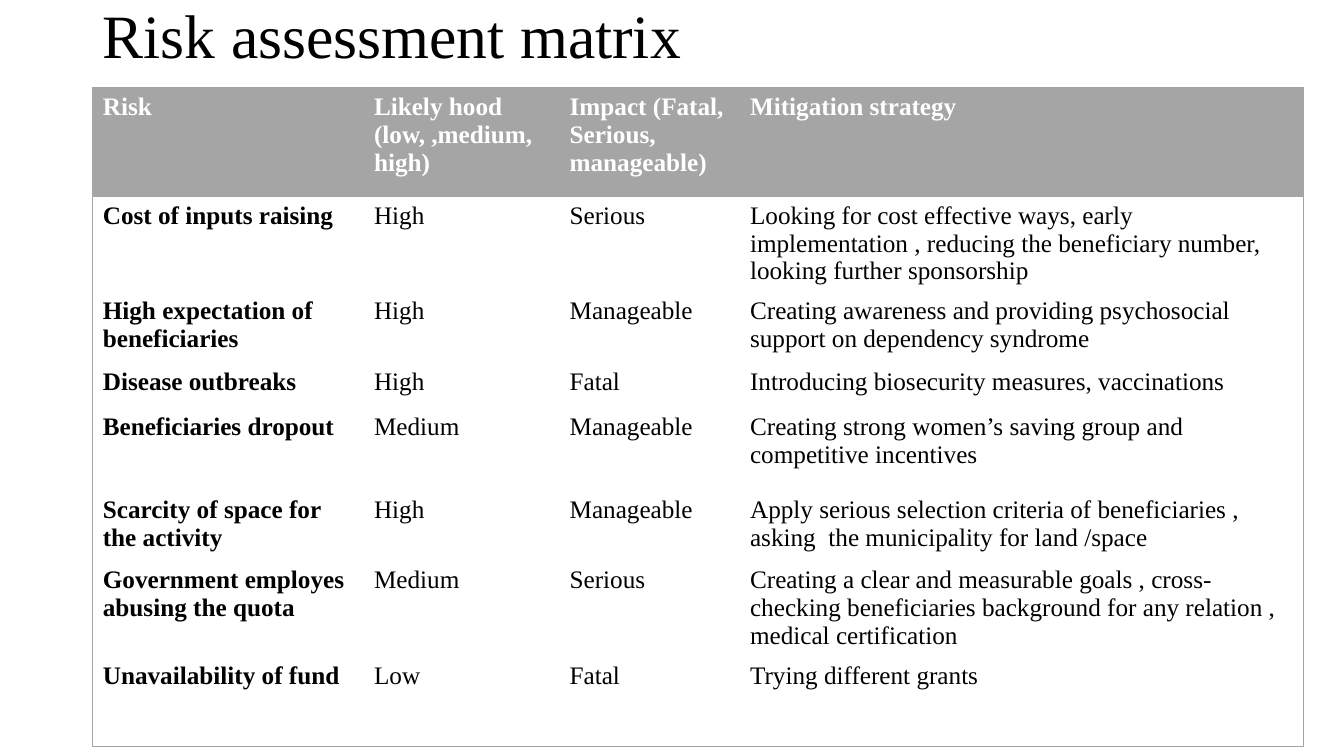
from lxml import etree
from pptx import Presentation
from pptx import util as u
from pptx.dml.color import RGBColor
from pptx.enum import text
from pptx.oxml import ns

PX = 9144  # EMU per px, 100 px to the inch

BLACK = RGBColor(0x00, 0x00, 0x00)
WHITE = RGBColor(0xFF, 0xFF, 0xFF)
GREY = RGBColor(0xA5, 0xA5, 0xA5)

PLAIN_TABLE_STYLE = "{2D5ABB26-0587-4C30-8999-92F81FD0307C}"

COLUMN_WIDTHS = [269, 194, 179, 559]
ROW_HEIGHTS = [108, 95, 70, 45, 82, 70, 95, 88]
RISKS = [
    ("Risk", "Likely hood (low, ,medium, high)", "Impact (Fatal, Serious, manageable)",
     "Mitigation strategy"),
    ("Cost of inputs raising", "High", "Serious",
     "Looking for cost effective ways, early implementation , reducing the "
     "beneficiary number, looking further sponsorship"),
    ("High expectation of beneficiaries", "High", "Manageable",
     "Creating awareness and providing psychosocial support on dependency syndrome"),
    ("Disease outbreaks", "High", "Fatal",
     "Introducing biosecurity measures, vaccinations"),
    ("Beneficiaries dropout", "Medium", "Manageable",
     "Creating strong women’s saving group and competitive incentives"),
    ("Scarcity of space for the activity", "High", "Manageable",
     "Apply serious selection criteria of beneficiaries , asking  the "
     "municipality for land /space"),
    ("Government employes abusing the quota", "Medium", "Serious",
     "Creating a clear and measurable goals , cross-checking beneficiaries "
     "background for any relation , medical certification"),
    ("Unavailability of fund", "Low", "Fatal", "Trying different grants"),
]


class SlideBuilder:
    """Holds the text style and the slide being built."""

    font = "Times New Roman"

    def __init__(self, slide):
        self.slide = slide

    def add_run(self, paragraph, words, size, color, bold=False):
        run = paragraph.add_run()
        run.text = words
        run.font.name = self.font
        run.font.size = u.Pt(size)
        run.font.bold = bold
        run.font.color.rgb = color

    def title(self, words, left, top, width, height):
        shape = self.slide.shapes.title
        shape.left, shape.top = left * PX, top * PX
        shape.width, shape.height = width * PX, height * PX
        frame = shape.text_frame
        frame.vertical_anchor = text.MSO_ANCHOR.MIDDLE
        frame.auto_size = text.MSO_AUTO_SIZE.NONE
        paragraph = frame.paragraphs[0]
        paragraph.alignment = text.PP_ALIGN.LEFT
        paragraph.line_spacing = 0.9
        self.add_run(paragraph, words, 44, BLACK)

    def border(self, cell, side):
        properties = cell._tc.get_or_add_tcPr()
        line = etree.SubElement(properties, ns.qn(f"a:ln{side}"), w=str(u.Pt(0.5)))
        fill = etree.SubElement(line, ns.qn("a:solidFill"))
        etree.SubElement(fill, ns.qn("a:srgbClr"), val=str(GREY))

    def table(self, rows, left, top, widths, heights):
        frame = self.slide.shapes.add_table(
            len(heights), len(widths), left * PX, top * PX,
            sum(widths) * PX, sum(heights) * PX)
        table = frame.table
        table.horz_banding = False
        table.first_col = True
        table._tbl.tblPr.find(ns.qn("a:tableStyleId")).text = PLAIN_TABLE_STYLE
        for column, width in zip(table.columns, widths):
            column.width = width * PX
        for row, height in zip(table.rows, heights):
            row.height = height * PX

        last_row, last_column = len(heights) - 1, len(widths) - 1
        for r, row in enumerate(rows):
            for c, words in enumerate(row):
                cell = table.cell(r, c)
                header = r == 0
                # Only the outer edge of the table is ruled
                edges = {"L": c == 0, "R": c == last_column,
                         "T": header, "B": r == last_row}
                for side, outer in edges.items():
                    if outer:
                        self.border(cell, side)
                if header:
                    cell.fill.solid()
                    cell.fill.fore_color.rgb = GREY
                else:
                    cell.fill.background()
                self.add_run(cell.text_frame.paragraphs[0], words, 18,
                             WHITE if header else BLACK, bold=header or c == 0)


def main():
    presentation = Presentation()
    presentation.slide_width = u.Inches(13.33)
    presentation.slide_height = u.Inches(7.5)
    layout = presentation.slide_layouts.get_by_name("Title Only")
    builder = SlideBuilder(presentation.slides.add_slide(layout))

    # Title
    builder.title("Risk assessment matrix", 92, 0, 1150, 77)

    # Risk table
    builder.table(RISKS, 92, 87, COLUMN_WIDTHS, ROW_HEIGHTS)

    presentation.save("out.pptx")


if __name__ == "__main__":
    main()
